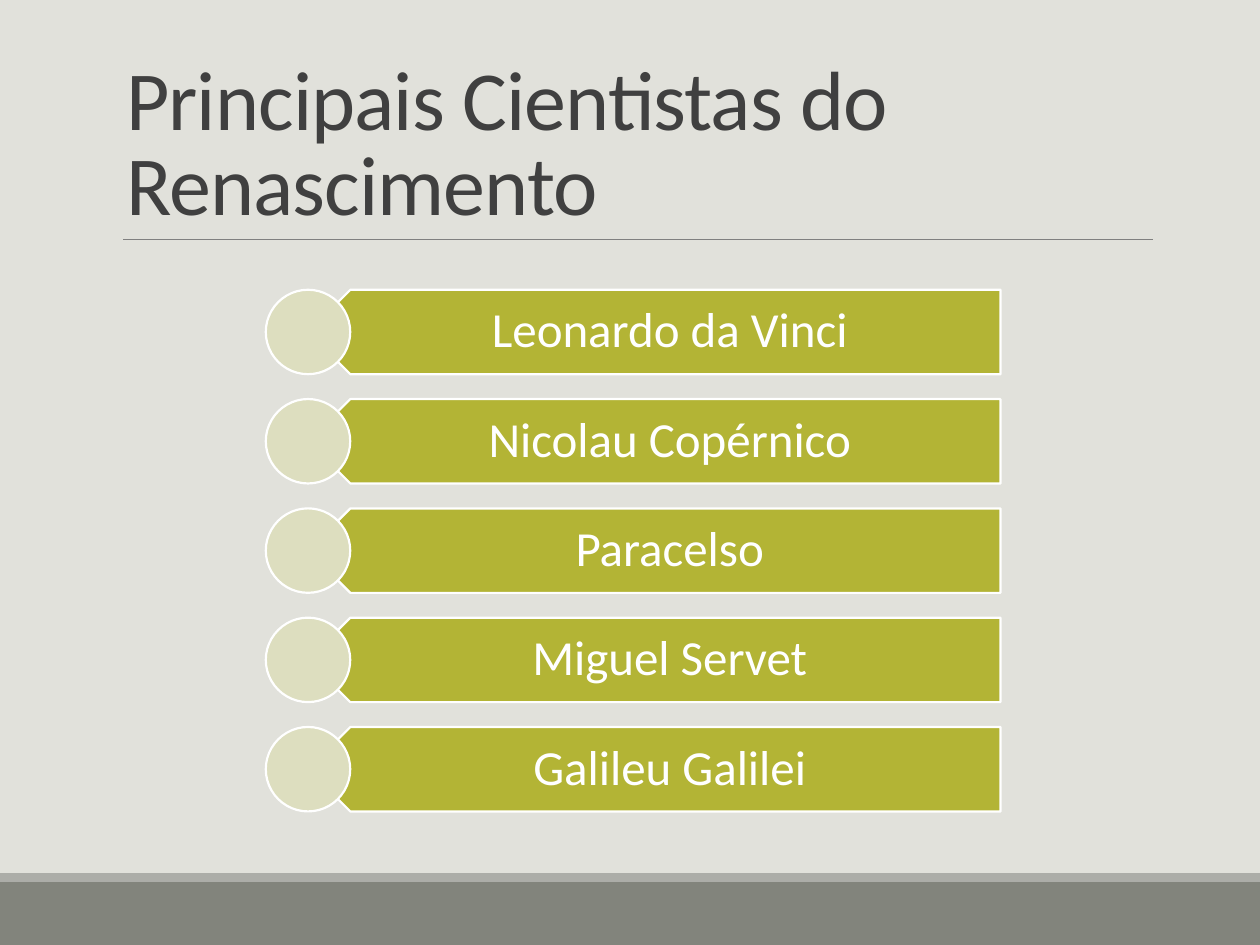
import pptx
import pptx.util
import pptx.dml.color
import pptx.enum.shapes
import pptx.enum.text
import pptx.oxml.ns
from dataclasses import dataclass
from lxml import etree

Inches = pptx.util.Inches
Pt = pptx.util.Pt
Shape = pptx.enum.shapes.MSO_SHAPE
Anchor = pptx.enum.text.MSO_ANCHOR
Align = pptx.enum.text.PP_ALIGN


@dataclass(frozen=True)
class Theme:
    font: str = "Calibri"
    back: str = "E1E1DB"
    band: str = "82847C"
    strip: str = "ACADA8"
    rule: str = "808080"
    ink: str = "404040"
    bar: str = "B3B435"
    dot: str = "DDDEBF"
    white: str = "FFFFFF"
    head: float = 48
    body: float = 28
    edge: float = 1.25


THEME = Theme()
NAMES = ["Leonardo da Vinci", "Nicolau Copérnico", "Paracelso",
         "Miguel Servet", "Galileu Galilei"]


def color(code):
    return pptx.dml.color.RGBColor.from_string(code)


def add_box(shapes, kind, box, fill, line=None):
    shape = shapes.add_shape(kind, *map(Inches, box))
    shape.shadow.inherit = False
    shape.fill.solid()
    shape.fill.fore_color.rgb = color(fill)
    if line:
        shape.line.color.rgb = color(line)
        shape.line.width = Pt(THEME.edge)
    else:
        shape.line.fill.background()
    return shape


def add_run(para, text, size, ink):
    run = para.add_run()
    run.text = text
    run.font.name = THEME.font
    run.font.size = Pt(size)
    run.font.color.rgb = color(ink)
    return run


def add_foot(slide, box):
    left, top, width, height = box
    strip = 0.07
    add_box(slide.shapes, Shape.RECTANGLE,
            (left, top + strip, width, height - strip), THEME.band)
    add_box(slide.shapes, Shape.RECTANGLE, (left, top, width, strip), THEME.strip)


def add_title(slide, box, text):
    """Fill the title placeholder and rule a line along its foot."""
    left, top, width, height = box
    title = slide.shapes.title
    title.left, title.top, title.width, title.height = map(Inches, box)
    frame = title.text_frame
    frame.word_wrap = True
    frame.auto_size = pptx.enum.text.MSO_AUTO_SIZE.NONE
    frame.vertical_anchor = Anchor.BOTTOM
    para = frame.paragraphs[0]
    para.alignment = Align.LEFT
    para.line_spacing = 0.85
    run = add_run(para, text, THEME.head, THEME.ink)
    run.font._element.set("spc", "-50")

    foot = Inches(top + height)
    rule = slide.shapes.add_connector(
        pptx.enum.shapes.MSO_CONNECTOR.STRAIGHT,
        Inches(left + 0.08), foot, Inches(left + width), foot)
    rule.line.color.rgb = color(THEME.rule)
    rule.line.width = Pt(0.5)
    etree.SubElement(rule._element.spPr, pptx.oxml.ns.qn("a:effectLst"))


def add_row(shapes, box, name):
    """Draw a bar pointing left, its name, and a disc over the tip."""
    left, top, width, size = box
    half = size / 2
    bar = add_box(shapes, Shape.PENTAGON,
                  (left + half, top, width - half, size), THEME.bar, THEME.white)
    bar.rotation = 180

    label = shapes.add_textbox(
        *map(Inches, (left + 0.51, top, width - 0.51, size)))
    frame = label.text_frame
    frame.word_wrap = True
    frame.vertical_anchor = Anchor.MIDDLE
    frame.margin_left, frame.margin_right = Inches(0.29), Inches(0.22)
    frame.margin_top = frame.margin_bottom = Inches(0.12)
    para = frame.paragraphs[0]
    para.alignment = Align.CENTER
    para.line_spacing = 0.9
    add_run(para, name, THEME.body, THEME.white)

    add_box(shapes, Shape.OVAL, (left, top, size, size), THEME.dot, THEME.white)


def add_list(slide, box, names):
    left, top, width, height = box
    size = 0.67
    step = (height - size) / (len(names) - 1)
    group = slide.shapes.add_group_shape()
    for i, name in enumerate(names):
        add_row(group.shapes, (left, top + i * step, width, size), name)


def main():
    deck = pptx.Presentation()
    deck.slide_width, deck.slide_height = Inches(10), Inches(7.5)
    slide = deck.slides.add_slide(deck.slide_layouts.get_by_name("Title Only"))
    slide.background.fill.solid()
    slide.background.fill.fore_color.rgb = color(THEME.back)
    add_foot(slide, (0, 6.93, 10, 0.57))
    add_title(slide, (0.9, 0.31, 8.25, 1.59),
              "Principais Cientistas do Renascimento")
    add_list(slide, (2.11, 2.3, 5.83, 4.14), NAMES)
    deck.save("out.pptx")


if __name__ == "__main__":
    main()
